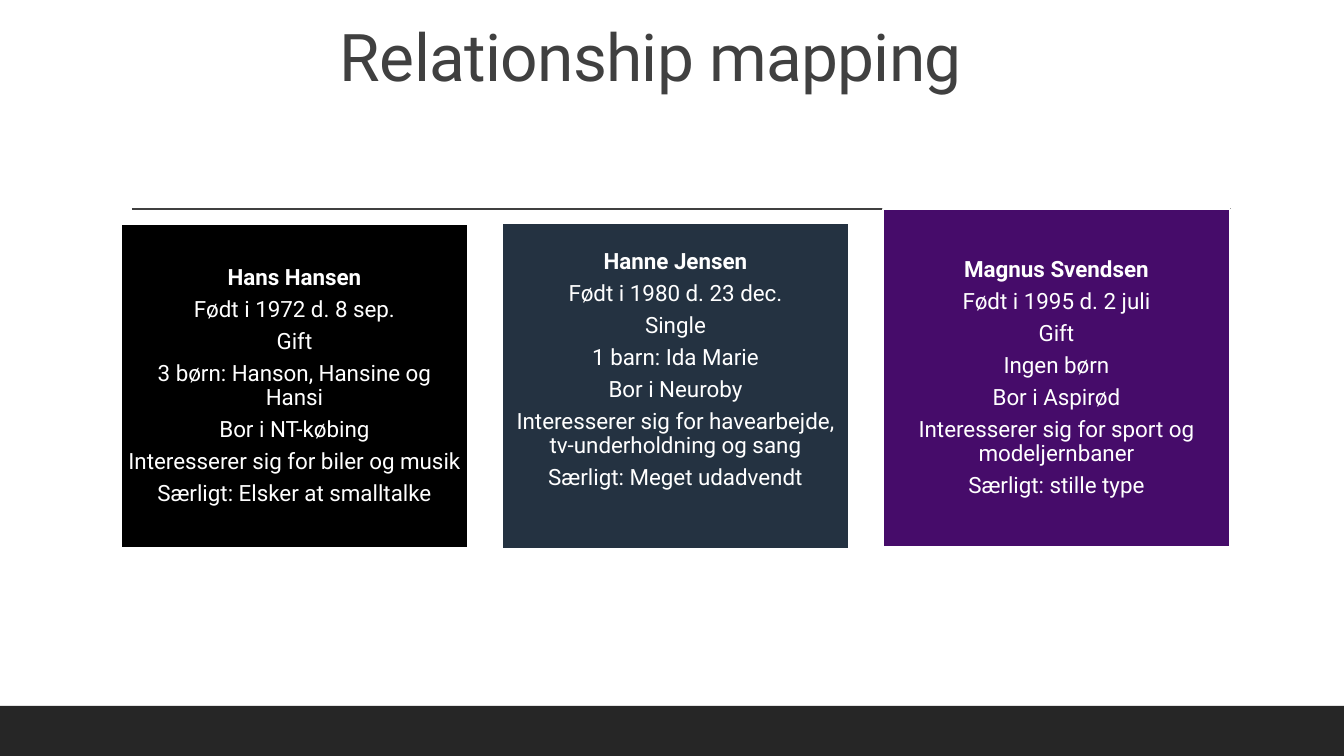
from lxml import etree
from pptx import Presentation
from pptx.dml.color import RGBColor
from pptx.enum.shapes import MSO_CONNECTOR, MSO_SHAPE
from pptx.enum.text import MSO_ANCHOR, PP_ALIGN
from pptx.oxml.ns import qn
from pptx.util import Emu, Pt

RECT = MSO_SHAPE.RECTANGLE
STRAIGHT = MSO_CONNECTOR.STRAIGHT
LEFT, CENTER = PP_ALIGN.LEFT, PP_ALIGN.CENTER
MIDDLE, BOTTOM = MSO_ANCHOR.MIDDLE, MSO_ANCHOR.BOTTOM

# Content
TITLE = "Relationship mapping"
PEOPLE = [
    {"name": "Hans Hansen", "fill": "black", "top": 224, "height": 324, "lift": 0,
     "facts": ["Født i 1972 d. 8 sep.", "Gift", "3 børn: Hanson, Hansine og Hansi",
               "Bor i NT-købing", "Interesserer sig for biler og musik",
               "Særligt: Elsker at smalltalke"]},
    {"name": "Hanne Jensen", "fill": "navy", "top": 223, "height": 326, "lift": 32,
     "facts": ["Født i 1980 d. 23 dec.", "Single", "1 barn: Ida Marie", "Bor i Neuroby",
               "Interesserer sig for havearbejde, tv-underholdning og sang",
               "Særligt: Meget udadvendt"]},
    {"name": "Magnus Svendsen", "fill": "purple", "top": 209, "height": 338, "lift": 0,
     "facts": ["Født i 1995 d. 2 juli", "Gift", "Ingen børn", "Bor i Aspirød",
               "Interesserer sig for sport og modeljernbaner",
               "Særligt: stille type"]},
]
COLORS = {"black": "000000", "navy": "243241", "purple": "460C6A",
          "white": "FFFFFF", "bar": "262626", "gray": "404040"}
FONT = "Roboto"

# Layout in px
SLIDE_W, SLIDE_H = 1344, 756
BAR_H = 50
RULE_LEFT, RULE_RIGHT, RULE_Y = 132, 1231, 209
CARD_LEFT, CARD_W, CARD_STEP, CARD_INSET = 121, 347, 381, 7


def px(length):
    return Emu(round(length * 914400 / 100.8))


def color(key):
    return RGBColor.from_string(COLORS[key])


def write(frame, lines, *, size, ink, align=LEFT, anchor=MIDDLE, insets=(10, 5, 10, 5),
          after=0, bold_first=False, tracking=0):
    frame.word_wrap = True
    frame.vertical_anchor = anchor
    (frame.margin_left, frame.margin_top,
     frame.margin_right, frame.margin_bottom) = map(px, insets)
    for i, line in enumerate(lines):
        paragraph = frame.add_paragraph() if i else frame.paragraphs[0]
        paragraph.alignment = align
        paragraph.line_spacing = 0.9
        paragraph.space_after = Pt(after)
        run = paragraph.add_run()
        run.text = line
        run.font.name = FONT
        run.font.size = Pt(size)
        run.font.bold = bold_first and i == 0
        run.font.color.rgb = color(ink)
        if tracking:
            run._r.get_or_add_rPr().set("spc", str(tracking))


def add_box(left, top, width, height, fill, outline=None):
    box = slide.shapes.add_shape(RECT, px(left), px(top), px(width), px(height))
    box.shadow.inherit = False
    box.fill.solid()
    box.fill.fore_color.rgb = color(fill)
    if outline:
        box.line.color.rgb = color(outline)
        box.line.width = Pt(1.25)
    else:
        box.line.fill.background()
    return box


deck = Presentation()
deck.slide_width, deck.slide_height = px(SLIDE_W), px(SLIDE_H)
slide = deck.slides.add_slide(deck.slide_layouts[6])

# Footer bar and rule
add_box(0, SLIDE_H - BAR_H, SLIDE_W, BAR_H, "bar")
rule = slide.shapes.add_connector(STRAIGHT, px(RULE_LEFT), px(RULE_Y), px(RULE_RIGHT), px(RULE_Y))
rule.line.color.rgb = color("gray")
rule.line.width = Pt(1)
etree.SubElement(rule._element.spPr, qn("a:effectLst"))

# Title
title = slide.shapes.add_textbox(px(330), px(-59), px(1109), px(160))
write(title.text_frame, [TITLE], size=47, ink="gray", anchor=BOTTOM, tracking=-50)

# One card per person
for i, person in enumerate(PEOPLE):
    card = add_box(CARD_LEFT + i * CARD_STEP, person["top"], CARD_W, person["height"],
                   person["fill"], outline="white")
    write(card.text_frame, [person["name"], *person["facts"]], size=16, ink="white",
          align=CENTER, after=5.6, bold_first=True,
          insets=(CARD_INSET, CARD_INSET, CARD_INSET, CARD_INSET + person["lift"]))

deck.save("out.pptx")
